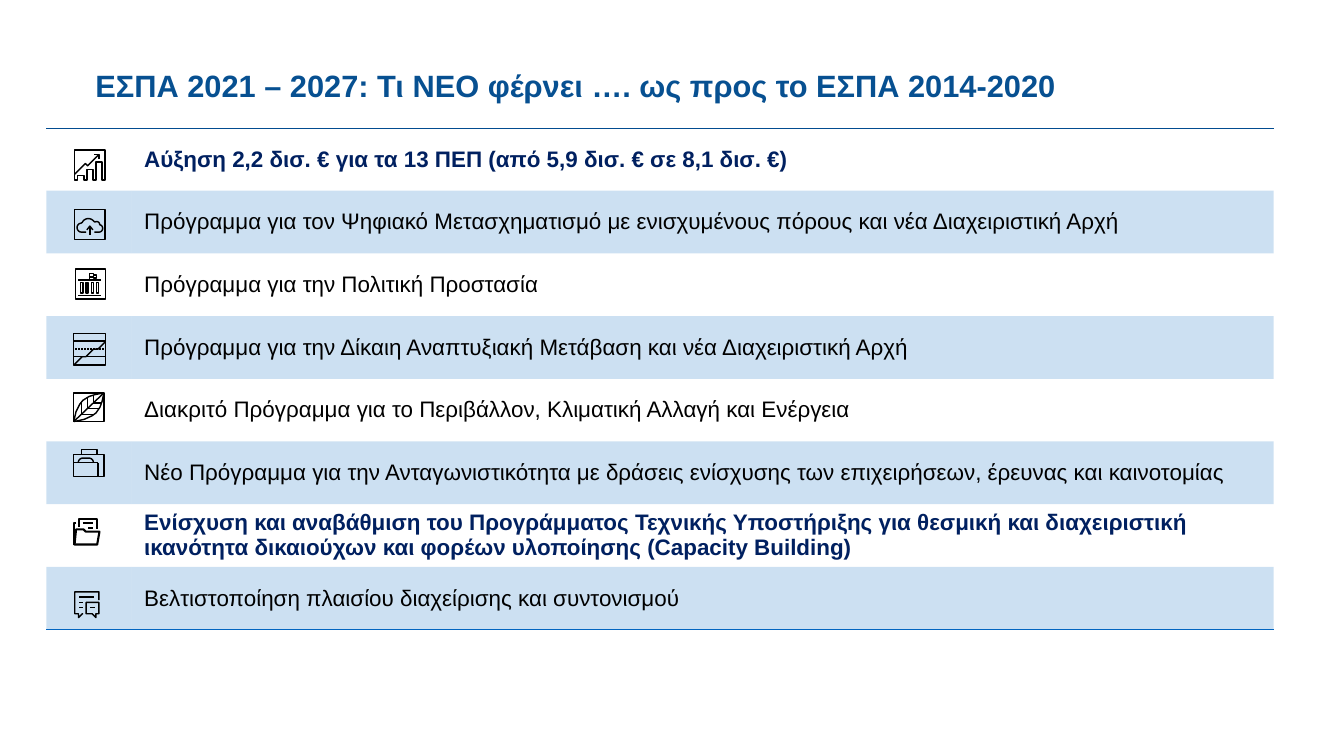
import math
import pptx
import pptx.util
import pptx.dml.color
import pptx.enum.text
import pptx.oxml.ns
from lxml import etree

Cm, Pt = pptx.util.Cm, pptx.util.Pt

TITLE = "ΕΣΠΑ 2021 – 2027: Τι ΝΕΟ φέρνει …. ως προς το ΕΣΠΑ 2014-2020"
ROWS = [
    ("Αύξηση 2,2 δισ. € για τα 13 ΠΕΠ (από 5,9 δισ. € σε 8,1 δισ. €)", True),
    ("Πρόγραμμα για τον Ψηφιακό Μετασχηματισμό με ενισχυμένους πόρους και νέα Διαχειριστική Αρχή", False),
    ("Πρόγραμμα για την Πολιτική Προστασία", False),
    ("Πρόγραμμα για την Δίκαιη Αναπτυξιακή Μετάβαση και νέα Διαχειριστική Αρχή", False),
    ("Διακριτό Πρόγραμμα για το Περιβάλλον, Κλιματική Αλλαγή και Ενέργεια", False),
    ("Νέο Πρόγραμμα για την Ανταγωνιστικότητα με δράσεις ενίσχυσης των επιχειρήσεων, έρευνας και καινοτομίας", False),
    ("Ενίσχυση και αναβάθμιση του Προγράμματος Τεχνικής Υποστήριξης για θεσμική και διαχειριστική "
     "ικανότητα δικαιούχων και φορέων υλοποίησης (Capacity Building)", True),
    ("Βελτιστοποίηση πλαισίου διαχείρισης και συντονισμού", False),
]
BLUE, NAVY, BLACK = "0365C0", "002060", "000000"
LEFT, TOP, HIGH = 2.34, 6.45, 3.16
WIDTHS = (4.29, 57.56)
UNIT = Pt(2.16)


def color(code):
    return pptx.dml.color.RGBColor.from_string(code)


def box(x, y, w, h):
    return [(x, y), (x + w, y), (x + w, y + h), (x, y + h), (x, y)]


def flat(x, y, w):
    return [(x, y), (x + w, y)]


def arc(x, y, r, start, end, steps=8):
    turns = [math.radians(start + (end - start) * i / steps) for i in range(steps + 1)]
    return [(x + r * math.cos(a), y + r * math.sin(a)) for a in turns]


def chart():
    edge = [(0, 0), (0, 20)]
    for x, y in ((2, 17), (8, 13), (14, 8)):
        edge += [(x, 20), (x, y), (x + 4, y), (x + 4, 20)]
    edge += [(20, 20), (20, 0), (0, 0)]
    trend = [(0, 16), (7, 9), (8.5, 10.5), (16, 3)]
    head = [(13, 3), (16, 3), (16, 6)]
    return [edge, trend, head]


def cloud():
    puff = [(7.5, 15)] + arc(4.5, 12, 3, 90, 265) + arc(9, 10.5, 4.5, 205, 320)
    puff += arc(14.5, 10, 2, 235, 355) + arc(16, 12.5, 2.5, 285, 450) + [(13, 15)]
    stem = [(10, 17), (10, 11)]
    head = [(8, 13.5), (10, 11), (12, 13.5)]
    return [box(0, 0, 20, 20), puff, stem, head]


def hall():
    posts = [box(3.5 * i, 9, 1.5, 7) for i in range(1, 5)]
    flag = [[(9.5, 7.5), (9.5, 3)], box(9.5, 3, 2.5, 2.5), box(12, 4, 2, 2)]
    return [box(0, 0, 20, 20), flat(2, 7.5, 15), flat(2, 17.5, 15)] + posts + flag


def shift():
    steps = [(0, 21), (5.5, 15.5), (8, 15.5), (13, 10.5), (16, 10.5), (21, 5.5)]
    dots = [flat(x, 10.5, 0.9) for x in range(1, 20, 2)]
    return [box(0, 0, 21, 21), flat(0, 5, 21), flat(0, 15.5, 21), steps] + dots


def leaf(w=20, h=19):
    rim = [(0, h), (1.5, 12.5), (4, 7.5), (6, 5), (10, 2.5), (14, 1.2), (w, 0)]
    veins = [[(x, y), (x, h - x * h / w)] for x, y in ((5, 6), (9, 3), (13, 1.5))]
    half = [rim] + veins
    twin = [[(w - y * w / h, h - x * h / w) for x, y in line] for line in half]
    return [box(0, 0, w, h), [(0, h), (w, 0)]] + half + twin


def case():
    grip = [(5, 3), (5, 0), (15.5, 0), (15.5, 3)]
    flap = arc(6, 8.5, 3, 180, 270) + arc(10, 8.5, 3, 270, 360)
    return [box(0, 3, 20, 14.5), grip, flap, flat(0, 8.5, 16), [(16, 8.5), (16, 17.5)]]


def folder():
    page = [(3.5, 5.5), (3.5, 0), (15.5, 0), (15.5, 7)]
    back = [(1.5, 3), (0, 3), (0, 17)]
    front = [(0.5, 17), (1.5, 7), (6.5, 7), (8, 8.5), (17, 8.5), (15.5, 17), (0.5, 17)]
    return [page, back, front, flat(6, 3, 6.5), flat(9.5, 6, 3)]


def talk():
    back = [(16, 5.5), (16, 0), (0, 0), (0, 14.5), (2.5, 14.5), (2.5, 17), (5, 14.5), (5.5, 14.5)]
    front = [(7.5, 7), (16, 7), (16, 14.5), (14, 14.5), (14, 17), (11.5, 14.5), (7.5, 14.5), (7.5, 7)]
    words = [flat(3, 3.5, 10), flat(3, 7, 2.5), flat(3, 10.5, 2.5), flat(10, 10.5, 3.5)]
    return [back, front] + words


ICONS = [
    (3.73, 7.52, chart), (3.73, 10.52, cloud), (3.76, 13.51, hall), (3.68, 16.76, shift),
    (3.68, 19.76, leaf), (3.68, 22.63, case), (3.68, 26.11, folder), (3.73, 29.79, talk),
]


def draw(slide, left, top, lines, width):
    lines = [[(x * UNIT, y * UNIT) for x, y in line] for line in lines]
    pen = slide.shapes.build_freeform(*lines[0][0])
    for line in lines:
        pen.move_to(*line[0])
        pen.add_line_segments(line[1:], close=line[0] == line[-1])
    icon = pen.convert_to_shape(Cm(left) + UNIT // 2, Cm(top) + UNIT // 2)
    icon.shadow.inherit = False
    icon.fill.background()
    icon.line.color.rgb = color(BLACK)
    icon.line.width = Pt(width)


def style(para, size, code, bold):
    font = para.font
    font.name, font.size, font.bold = "Arial", Pt(size), bold
    font.color.rgb = color(code)


def child(node, tag, **attrs):
    return etree.SubElement(node, pptx.oxml.ns.qn(tag), **attrs)


def border(cell, side, code):
    props = cell._tc.get_or_add_tcPr()
    line = child(props, "a:" + side, w=str(Pt(1)))
    child(child(line, "a:solidFill"), "a:srgbClr", val=code)
    props.insert(0, line)


def shade(cell, code, alpha):
    cell.fill.solid()
    cell.fill.fore_color.rgb = color(code)
    tint = cell._tc.tcPr.find(".//" + pptx.oxml.ns.qn("a:srgbClr"))
    child(tint, "a:alpha", val=str(alpha * 1000))


def head(slide):
    title = slide.shapes.title
    title.left, title.top, title.width, title.height = Cm(4.55), Cm(3.23), Cm(59.66), Cm(2.97)
    title.text_frame.text = TITLE
    title.text_frame.vertical_anchor = pptx.enum.text.MSO_ANCHOR.TOP
    para = title.text_frame.paragraphs[0]
    para.alignment = pptx.enum.text.PP_ALIGN.LEFT
    style(para, 44, "075091", True)


def grid(slide):
    count = len(ROWS)
    frame = slide.shapes.add_table(count, 2, Cm(LEFT), Cm(TOP), Cm(sum(WIDTHS)), Cm(HIGH * count))
    table = frame.table
    table.first_row = table.horz_banding = False
    table._tbl.tblPr[0].text = "{2D5ABB26-0587-4C30-8999-92F81FD0307C}"
    for column, width in zip(table.columns, WIDTHS):
        column.width = Cm(width)
    for i, (text, bold) in enumerate(ROWS):
        table.rows[i].height = Cm(HIGH)
        for cell in table.rows[i].cells:
            if i % 2:
                shade(cell, BLUE, 20)
            else:
                cell.fill.background()
            if i == 0:
                border(cell, "lnT", "024C90")
            if i == count - 1:
                border(cell, "lnB", BLUE)
        cell = table.cell(i, 1)
        cell.text = text
        cell.vertical_anchor = pptx.enum.text.MSO_ANCHOR.MIDDLE
        cell.margin_left = cell.margin_right = Cm(0.64)
        cell.margin_top = cell.margin_bottom = Cm(0.3)
        style(cell.text_frame.paragraphs[0], 32, NAVY if bold else BLACK, bold)


def main():
    deck = pptx.Presentation()
    deck.slide_width, deck.slide_height = Cm(67.74), Cm(38.1)
    slide = deck.slides.add_slide(deck.slide_layouts[5])
    head(slide)
    grid(slide)
    for left, top, icon in ICONS:
        draw(slide, left, top, icon(), 3 if icon is folder else 2)
    deck.save("out.pptx")


if __name__ == "__main__":
    main()
